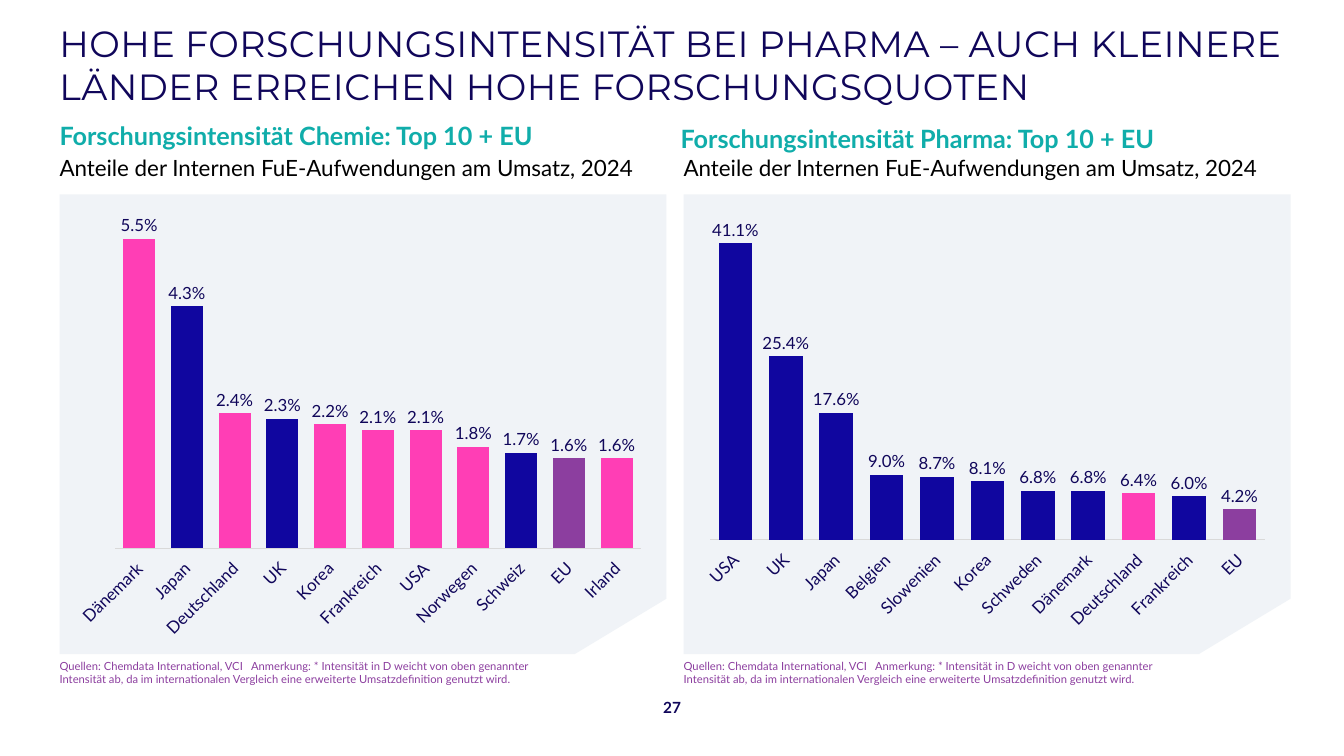
from dataclasses import dataclass

from lxml.etree import SubElement
from pptx import Presentation
from pptx.chart.data import CategoryChartData
from pptx.dml.color import RGBColor
from pptx.enum.chart import XL_CHART_TYPE as ChartType
from pptx.enum.chart import XL_LABEL_POSITION as LabelPosition
from pptx.enum.chart import XL_TICK_LABEL_POSITION as TickLabels
from pptx.enum.chart import XL_TICK_MARK as TickMark
from pptx.enum.text import MSO_ANCHOR as Anchor
from pptx.enum.text import PP_ALIGN as Align
from pptx.oxml.ns import qn
from pptx.util import Pt

PX = 9144  # 100 px to the inch
PERCENT = "0.0%"


@dataclass(frozen=True)
class Theme:
    heading_font: str = "Montserrat"
    body_font: str = "Lato"
    ink: str = "10065A"
    black: str = "000000"
    teal: str = "10ADAA"
    pink: str = "FF3EB5"
    blue: str = "10069F"
    purple: str = "8C3E9F"
    panel: str = "F0F3F7"
    axis: str = "D9D9D9"
    title_size: int = 26
    heading_size: int = 18
    subtitle_size: int = 16
    chart_size: int = 12
    number_size: int = 11
    source_size: int = 8


THEME = Theme()

TITLE = ("HOHE FORSCHUNGSINTENSITÄT BEI PHARMA – AUCH KLEINERE "
         "LÄNDER ERREICHEN HOHE FORSCHUNGSQUOTEN")
SUBTITLE = "Anteile der Internen FuE-Aufwendungen am Umsatz, 2024"
SOURCE = ("Quellen: Chemdata International, VCI\tAnmerkung: * Intensität in D "
          "weicht von oben genannter Intensität ab, da im internationalen "
          "Vergleich eine erweiterte Umsatzdefinition genutzt wird.")

CHEMISTRY = {
    "Dänemark": 0.055, "Japan": 0.043, "Deutschland": 0.024, "UK": 0.023,
    "Korea": 0.022, "Frankreich": 0.021, "USA": 0.021, "Norwegen": 0.018,
    "Schweiz": 0.017, "EU": 0.016, "Irland": 0.016,
}
PHARMA = {
    "USA": 0.411, "UK": 0.254, "Japan": 0.176, "Belgien": 0.09,
    "Slowenien": 0.087, "Korea": 0.081, "Schweden": 0.068, "Dänemark": 0.068,
    "Deutschland": 0.064, "Frankreich": 0.06, "EU": 0.042,
}
COLUMNS = [
    {
        "left": 59, "heading": "Forschungsintensität Chemie: Top 10 + EU",
        "heading_at": (59, 119), "shares": CHEMISTRY, "maximum": 0.06,
        "color": THEME.pink,
        "highlights": {"Japan": THEME.blue, "UK": THEME.blue,
                       "Schweiz": THEME.blue, "EU": THEME.purple},
        "plot": {"x": 0.08, "y": 0.01, "w": 0.9, "h": 0.78},
    },
    {
        "left": 678, "heading": "Forschungsintensität Pharma: Top 10 + EU",
        "heading_at": (675, 122), "shares": PHARMA, "maximum": 0.45,
        "color": THEME.blue,
        "highlights": {"Deutschland": THEME.pink, "EU": THEME.purple},
        "plot": {"x": 0.03, "y": 0.02, "w": 0.95, "h": 0.75},
    },
]


def apply(target, values):
    for name, value in values.items():
        setattr(target, name, value)


def paint(fill, color):
    fill.solid()
    fill.fore_color.rgb = RGBColor.from_string(color)


def style_font(font, size, color, name=THEME.body_font, bold=False):
    apply(font, {"size": Pt(size), "name": name, "bold": bold})
    font.color.rgb = RGBColor.from_string(color)


def add_text(slide, text, box, size, color, font=THEME.body_font, bold=False,
             anchor=Anchor.TOP, align=Align.LEFT, spacing=None, tab=None):
    """Write one paragraph; spacing is in hundredths of a point, tab in px."""
    frame = slide.shapes.add_textbox(*(value * PX for value in box)).text_frame
    apply(frame, {"word_wrap": True, "vertical_anchor": anchor,
                  "margin_left": 0, "margin_right": 0,
                  "margin_top": 0, "margin_bottom": 0})
    paragraph = frame.paragraphs[0]
    paragraph.alignment = align
    if tab:
        stops = SubElement(paragraph._p.get_or_add_pPr(), qn("a:tabLst"))
        SubElement(stops, qn("a:tab"), pos=str(tab * PX), algn="l")
    run = paragraph.add_run()
    run.text = text
    style_font(run.font, size, color, font, bold)
    if spacing:
        run._r.get_or_add_rPr().set("spc", str(spacing))


def add_panel(slide, left, top):
    """Draw the pale panel with its cut lower right corner."""
    outline = [(602, 0), (602, 401), (511, 456), (0, 456)]
    builder = slide.shapes.build_freeform(left, top, scale=PX)
    builder.add_line_segments([(left + x, top + y) for x, y in outline])
    panel = builder.convert_to_shape()
    panel.shadow.inherit = False
    paint(panel.fill, THEME.panel)
    panel.line.fill.background()


def place_plot(chart, position):
    """Fix the inner plot area as fractions of the chart."""
    area = chart._chartSpace.chart.plotArea
    layout = area.find(qn("c:layout"))
    if layout is None:
        layout = area.makeelement(qn("c:layout"), {})
        area.insert(0, layout)
    manual = SubElement(layout, qn("c:manualLayout"))
    settings = {"layoutTarget": "inner", "xMode": "edge", "yMode": "edge",
                **position}
    for name, value in settings.items():
        SubElement(manual, qn(f"c:{name}"), val=str(value))


def style_axes(chart, maximum):
    apply(chart.value_axis, {"visible": False, "has_major_gridlines": False,
                             "minimum_scale": 0, "maximum_scale": maximum})
    chart.value_axis.tick_labels.number_format = PERCENT
    axis = chart.category_axis
    apply(axis, {"major_tick_mark": TickMark.NONE,
                 "minor_tick_mark": TickMark.NONE,
                 "has_major_gridlines": False,
                 "tick_label_position": TickLabels.LOW})
    paint(axis.format.line.fill, THEME.axis)
    axis.format.line.width = Pt(0.75)
    style_font(axis.tick_labels.font, THEME.chart_size, THEME.ink)
    body = axis._element.find(qn("c:txPr")).find(qn("a:bodyPr"))
    apply_rotation = {"rot": "-2700000", "vert": "horz"}
    body.attrib.update(apply_rotation)


def add_share_chart(slide, box, shares, maximum, color, highlights, plot_area):
    data = CategoryChartData(number_format=PERCENT)
    data.categories = list(shares)
    data.add_series("Series 1", list(shares.values()))
    chart = slide.shapes.add_chart(ChartType.COLUMN_CLUSTERED,
                                   *(value * PX for value in box), data).chart
    apply(chart, {"has_legend": False, "has_title": False})
    style_font(chart.font, THEME.chart_size, THEME.ink)
    style_axes(chart, maximum)
    place_plot(chart, plot_area)

    plot = chart.plots[0]
    apply(plot, {"gap_width": 50, "overlap": -27, "vary_by_categories": False,
                 "has_data_labels": True})
    apply(plot.data_labels, {"show_value": True, "number_format": PERCENT,
                             "number_format_is_linked": False,
                             "position": LabelPosition.OUTSIDE_END})
    style_font(plot.data_labels.font, THEME.chart_size, THEME.ink)

    series = plot.series[0]
    paint(series.format.fill, color)
    for index, country in enumerate(shares):
        if country in highlights:
            paint(series.points[index].format.fill, highlights[country])


def add_column(slide, column):
    left = column["left"]
    add_panel(slide, left, 193)
    add_text(slide, column["heading"], (*column["heading_at"], 602, 31),
             THEME.heading_size, THEME.teal, bold=True)
    add_text(slide, SUBTITLE, (left, 153, 602, 28),
             THEME.subtitle_size, THEME.black)
    add_share_chart(slide, (left + 9, 205, 579, 429), column["shares"],
                    column["maximum"], column["color"], column["highlights"],
                    column["plot"])
    add_text(slide, SOURCE, (left, 654, 508, 13),
             THEME.source_size, THEME.purple, tab=190)


def main():
    presentation = Presentation()
    apply(presentation, {"slide_width": 1333 * PX, "slide_height": 750 * PX})
    slide = presentation.slides.add_slide(presentation.slide_layouts[6])
    add_text(slide, TITLE, (59, 15, 1220, 98), THEME.title_size, THEME.ink,
             font=THEME.heading_font, anchor=Anchor.MIDDLE, spacing=30)
    for column in COLUMNS:
        add_column(slide, column)
    add_text(slide, "27", (637, 688, 59, 28), THEME.number_size, THEME.ink,
             bold=True, anchor=Anchor.MIDDLE, align=Align.CENTER)
    presentation.save("out.pptx")


if __name__ == "__main__":
    main()
